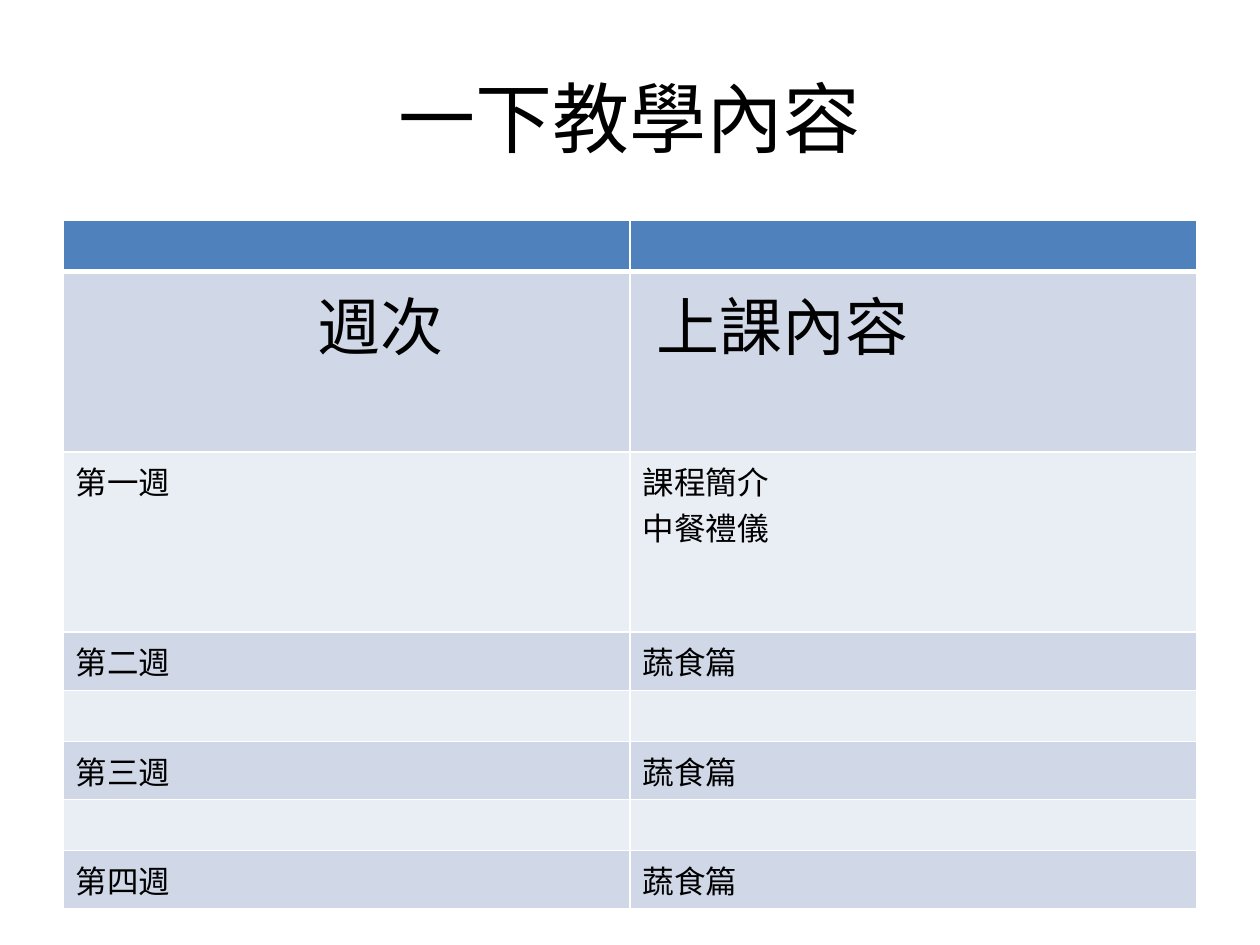
from lxml.etree import SubElement
from pptx import Presentation
from pptx.dml.color import RGBColor
from pptx.enum.text import MSO_ANCHOR, PP_ALIGN
from pptx.oxml.ns import qn
from pptx.util import Pt

HUES = {"head": "4F81BD", "dark": "D0D8E8", "light": "E9EDF4",
        "line": "FFFFFF", "text": "000000"}
ROWS = [
    (29.2, "", ""),
    (103, "週次", "上課內容"),
    (103, "第一週", "課程簡介\n中餐禮儀"),
    (33, "第二週", "蔬食篇"),
    (29.2, "", ""),
    (33, "第三週", "蔬食篇"),
    (29.2, "", ""),
    (33, "第四週", "蔬食篇"),
]
PAD = 7.2
INDENTS = [138, 8]


def style(frame, size, face):
    for para in frame.paragraphs:
        para.font.size = Pt(size)
        for run in para.runs:
            run.font.size = Pt(size)
            run.font.name = face
            run.font.bold = False
            run.font.color.rgb = RGBColor.from_string(HUES["text"])


def add_title(slide, text):
    title = slide.shapes.title
    title.left, title.top = Pt(36), Pt(21.6)
    title.width, title.height = Pt(648), Pt(90)
    frame = title.text_frame
    frame.text = text
    frame.vertical_anchor = MSO_ANCHOR.MIDDLE
    frame.paragraphs[0].alignment = PP_ALIGN.CENTER
    style(frame, 44, "Calibri")


def add_edge(cell, side, width):
    props = cell._tc.get_or_add_tcPr()
    line = SubElement(props, qn(f"a:ln{side}"), w=str(Pt(width)))
    fill = SubElement(line, qn("a:solidFill"))
    SubElement(fill, qn("a:srgbClr"), val=HUES["line"])


def fill_cell(cell, text, row, col):
    cell.text_frame.text = text
    style(cell.text_frame, 36 if row == 1 else 18, "Arial")
    if row == 1:
        cell.margin_left = Pt(PAD + INDENTS[col])
    for side in "LRTB":
        thick = (row, side) in ((0, "B"), (1, "T"))
        add_edge(cell, side, 3 if thick else 1)
    hue = "head" if row == 0 else "dark" if row % 2 else "light"
    cell.fill.solid()
    cell.fill.fore_color.rgb = RGBColor.from_string(HUES[hue])


def add_plan(slide):
    height = sum(row[0] for row in ROWS)
    table = slide.shapes.add_table(
        len(ROWS), 2, Pt(36), Pt(126), Pt(648), Pt(height)).table
    for row, (tall, *texts) in enumerate(ROWS):
        table.rows[row].height = Pt(tall)
        for col, text in enumerate(texts):
            fill_cell(table.cell(row, col), text, row, col)


def main():
    deck = Presentation()
    deck.slide_width, deck.slide_height = Pt(720), Pt(540)
    slide = deck.slides.add_slide(deck.slide_layouts[5])
    add_title(slide, "一下教學內容")
    add_plan(slide)
    deck.save("out.pptx")


if __name__ == "__main__":
    main()
